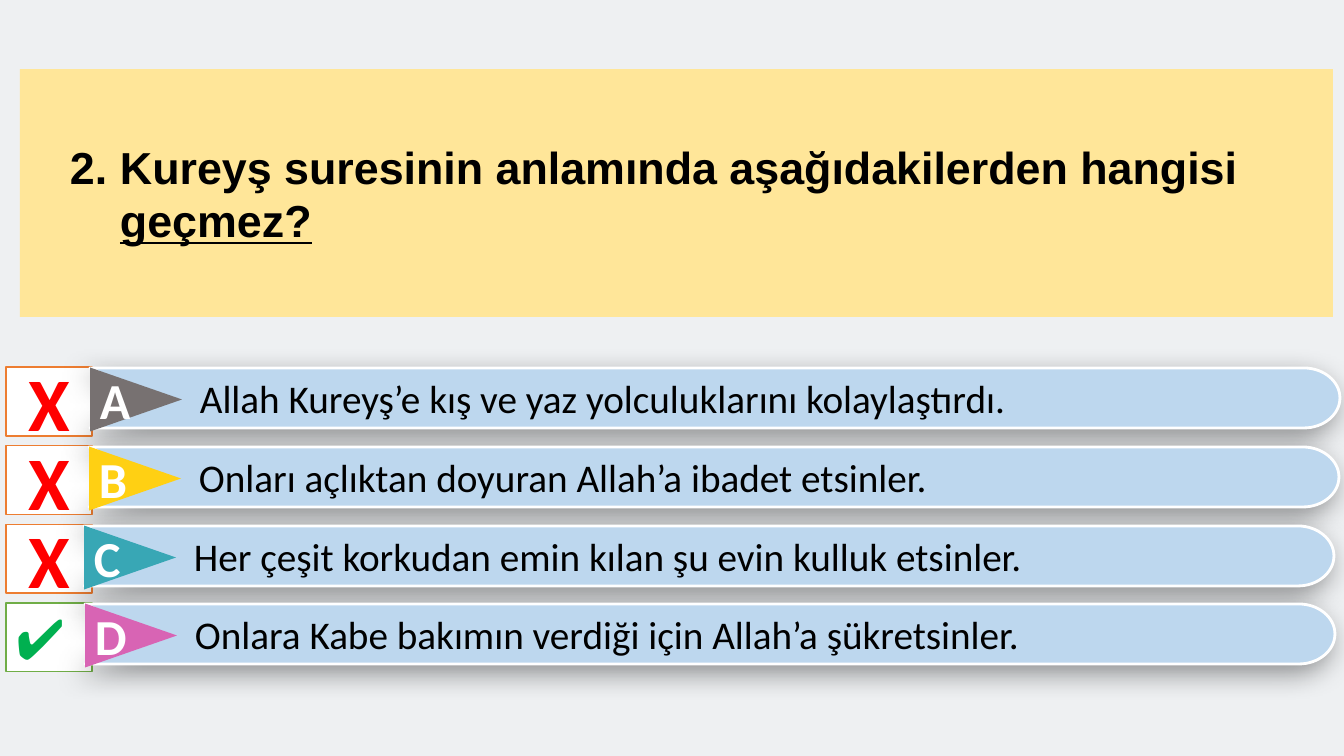
import lxml.etree
import pptx
import pptx.dml.color
import pptx.enum.shapes
import pptx.enum.text
import pptx.oxml.ns
import pptx.util

# Content
QUESTION = ["Kureyş suresinin anlamında aşağıdakilerden hangisi", "geçmez?"]
NUMBER = 2
# letter, answer, correct, triangle colour, bar left, bar top
ANSWERS = [
    ("A", "Allah Kureyş’e kış ve yaz yolculuklarını kolaylaştırdı.", False, "gray", 90, 368),
    ("B", "Onları açlıktan doyuran Allah’a ibadet etsinler.", False, "yellow", 89, 447),
    ("C", "Her çeşit korkudan emin kılan şu evin kulluk etsinler.", False, "teal", 84, 526),
    ("D", "Onlara Kabe bakımın verdiği için Allah’a şükretsinler.", True, "pink", 85, 604),
]
COLORS = {
    "back": "EEF0F2", "question": "FFE699", "bar": "BDD7EE", "white": "FFFFFF",
    "black": "000000", "red": "FF0000", "check": "00B050", "right": "70AD47",
    "wrong": "ED7D31", "gray": "777171", "yellow": "FFD013", "teal": "38A7B5",
    "pink": "D864B4",
}

# Layout in px
PX = 914400 / 100.8
SLIDE_W, SLIDE_H = 1344, 756
QUESTION_BOX = (20, 69, 1313, 248)
MARK_LEFT, MARK_TOP, MARK_W, MARK_H = 6, 367, 86, 69
MARK_PITCH = 78.6
BAR_W, BAR_H, BAR_END, BAR_NOTCH = 1250, 60, 36, 63
TRI_W, TRI_H = 64, 92
TEXT_INDENT = 100
QUESTION_INDENT, NUMBER_HANG = 100, 50
ROUND = 0.55  # handle length of a quarter ellipse

SHAPE = pptx.enum.shapes.MSO_SHAPE
CENTER = pptx.enum.text.PP_ALIGN.CENTER
LEFT = pptx.enum.text.PP_ALIGN.LEFT


def emu(px):
    return round(px * PX)


def rgb(name):
    return pptx.dml.color.RGBColor.from_string(COLORS[name])


def add_xml(parent, tag, **attrs):
    el = lxml.etree.SubElement(parent, pptx.oxml.ns.qn(tag))
    for key, value in attrs.items():
        el.set(key, str(value))
    return el


def paint(sp, fill, line=None, width=1):
    sp.shadow.inherit = False
    sp.fill.solid()
    sp.fill.fore_color.rgb = rgb(fill)
    if line:
        sp.line.color.rgb = rgb(line)
        sp.line.width = pptx.util.Pt(width)
    else:
        sp.line.fill.background()


def add_preset(parent, kind, box, fill, line=None):
    sp = parent.shapes.add_shape(kind, *map(emu, box))
    paint(sp, fill, line)
    return sp


def write(sp, lines, size, color, font="Calibri", bold=False, align=LEFT, indent=0):
    tf = sp.text_frame
    tf.word_wrap = True
    tf.vertical_anchor = pptx.enum.text.MSO_ANCHOR.MIDDLE
    tf.text = "\n".join(lines)
    for p in tf.paragraphs:
        p.alignment = align
        p._p.get_or_add_pPr().set("marL", str(emu(indent)))
        for r in p.runs:
            r.font.size = pptx.util.Pt(size)
            r.font.name = font
            r.font.bold = bold
            r.font.color.rgb = rgb(color)
    return tf


def add_mark(s, row, correct):
    box = (MARK_LEFT, MARK_TOP + row * MARK_PITCH, MARK_W, MARK_H)
    sp = add_preset(s, SHAPE.RECTANGLE, box, "white", "right" if correct else "wrong")
    if correct:
        write(sp, ["✔"], 40, "check")
    else:
        write(sp, ["X"], 54, "red", bold=True, align=CENTER)


def round_corner(line, handles):
    # Turn a straight segment into a curve that ends at the same point
    curve = lxml.etree.Element(pptx.oxml.ns.qn("a:cubicBezTo"))
    for x, y in handles:
        add_xml(curve, "a:pt", x=emu(x), y=emu(y))
    curve.append(line[0])
    line.getparent().replace(line, curve)


def add_bar(group, left, top, text):
    # Notched left side, rounded right end
    half, center = BAR_H / 2, BAR_W - BAR_END
    outline = [(center, 0), (BAR_W, half), (center, BAR_H), (0, BAR_H), (BAR_NOTCH, half)]
    fb = group.shapes.build_freeform(emu(left), emu(top), scale=1.0)
    fb.add_line_segments([(emu(left + x), emu(top + y)) for x, y in outline], close=True)
    sp = fb.convert_to_shape()
    lines = list(sp._element.iter(pptx.oxml.ns.qn("a:lnTo")))
    near_x, near_y = center + BAR_END * ROUND, half * (1 - ROUND)
    round_corner(lines[1], [(near_x, 0), (BAR_W, near_y)])
    round_corner(lines[2], [(BAR_W, BAR_H - near_y), (near_x, BAR_H)])

    paint(sp, "bar", "white", 2)
    effects = sp._element.spPr.find(pptx.oxml.ns.qn("a:effectLst"))
    shadow = add_xml(effects, "a:outerShdw", blurRad=pptx.util.Pt(20), dist=pptx.util.Pt(7),
                     dir=135 * 60000, algn="tr", rotWithShape=0)
    add_xml(add_xml(shadow, "a:srgbClr", val=COLORS["black"]), "a:alpha", val=40000)
    write(sp, [text], 28, "black", indent=TEXT_INDENT)


def add_letter(group, left, top, letter, color):
    # Triangle turned to point right, its base on the bar's left edge
    x = left + (TRI_H - TRI_W) / 2
    y = top + 1.5 + (BAR_H - TRI_H) / 2
    sp = add_preset(group, SHAPE.ISOSCELES_TRIANGLE, (x, y, TRI_W, TRI_H), color)
    sp.rotation = 90
    tf = write(sp, [letter], 36, "white", bold=True, align=CENTER)
    tf._txBody.bodyPr.set("vert", "vert270")


def add_question(s):
    sp = add_preset(s, SHAPE.RECTANGLE, QUESTION_BOX, "question")
    tf = write(sp, QUESTION, 32, "black", font="Arial", bold=True, indent=QUESTION_INDENT)
    tf.margin_left = tf.margin_top = tf.margin_right = tf.margin_bottom = 0
    first, last = tf.paragraphs
    pPr = first._p.get_or_add_pPr()
    pPr.set("indent", str(emu(-NUMBER_HANG)))
    add_xml(pPr, "a:buFont", typeface="Arial")
    add_xml(pPr, "a:buAutoNum", type="arabicPeriod", startAt=NUMBER)
    last.runs[0].font.underline = True


def main():
    prs = pptx.Presentation()
    prs.slide_width, prs.slide_height = emu(SLIDE_W), emu(SLIDE_H)
    s = prs.slides.add_slide(prs.slide_layouts[6])
    add_preset(s, SHAPE.RECTANGLE, (0, 0, SLIDE_W, SLIDE_H), "back")

    # Marks lie behind the answer bars, the last row at the back
    for row in reversed(range(len(ANSWERS))):
        add_mark(s, row, ANSWERS[row][2])
    for letter, text, _, color, left, top in ANSWERS:
        group = s.shapes.add_group_shape()
        add_bar(group, left, top, text)
        add_letter(group, left, top, letter, color)
    add_question(s)
    prs.save("out.pptx")


if __name__ == "__main__":
    main()
